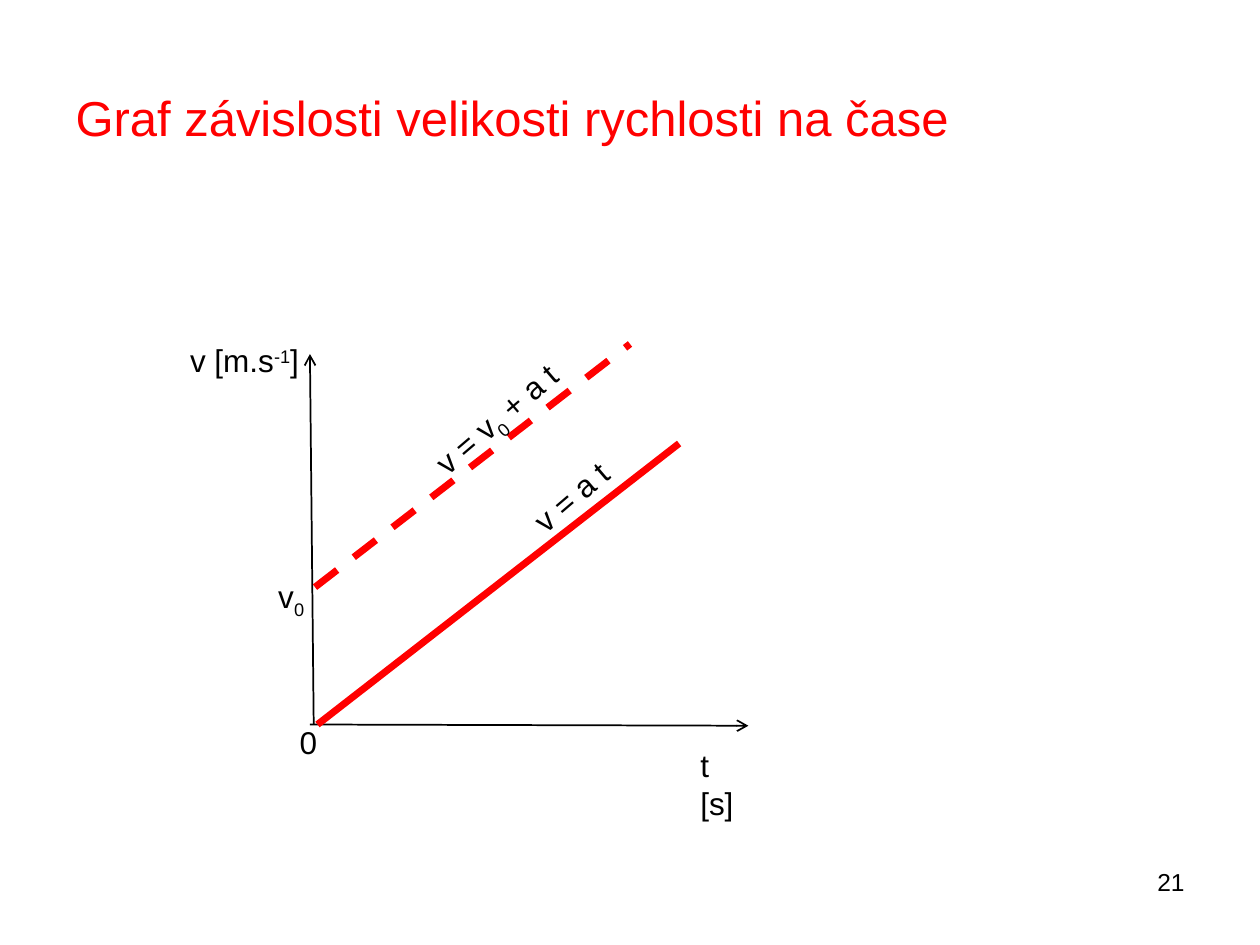
from dataclasses import dataclass
from typing import Optional

from lxml.etree import SubElement
from pptx import Presentation
from pptx.dml.color import RGBColor
from pptx.enum.dml import MSO_LINE_DASH_STYLE as Dash
from pptx.enum.shapes import MSO_CONNECTOR as Conn
from pptx.enum.text import MSO_ANCHOR as Anchor, PP_ALIGN as Align
from pptx.oxml.ns import qn
from pptx.util import Inches, Pt

COLS = 100
BLACK, RED = "000000", "FF0000"
SUPER, SUB = 30, -25


@dataclass
class Line:
    start: tuple[float, float]
    end: tuple[float, float]
    color: str
    width: float
    arrow: bool = False
    dash: Optional[Dash] = None


@dataclass
class Label:
    box: tuple[float, float, float, float]
    runs: list[tuple[str, int]]
    size: int = 18
    rotation: float = 0
    wrap: bool = True
    align: Align = Align.LEFT


AXES = [
    Line((24.6, 57.5), (59.4, 57.6), BLACK, 1, arrow=True),
    Line((24.9, 57.5), (24.6, 28.1), BLACK, 1, arrow=True),
]
GRAPHS = [
    Line((25.2, 57.5), (53.9, 35.2), RED, 4),
    Line((25, 46.6), (50, 27.3), RED, 4, dash=Dash.DASH),
]
SLOPE = 319.4
LABELS = [
    Label((71.7, 68.3, 23.3, 5.2), [("21", 0)], size=14, align=Align.RIGHT),
    Label((54.6, 58.7, 4.7, 3.1), [("t [s]", 0)]),
    Label((14.1, 26.6, 10.9, 4), [("v [m.s", 0), ("-1", SUPER), ("]", 0)], wrap=False),
    Label((22.8, 56.9, 2.6, 3.1), [("0", 0)]),
    Label((40.6, 36.7, 11.1, 4), [("v = a t", 0)], rotation=SLOPE),
    Label((32.3, 30.7, 15.3, 4), [("v = v", 0), ("0", SUB), (" + a t", 0)], rotation=SLOPE),
    Label((21.1, 45.3, 4.2, 4), [("v", 0), ("0", SUB)], wrap=False),
]

prs = Presentation()
prs.slide_width, prs.slide_height = Inches(10), Inches(7.5)
unit = prs.slide_width / COLS


def grid(*cells: float) -> list[int]:
    return [round(c * unit) for c in cells]


def rgb(value: str) -> RGBColor:
    return RGBColor.from_string(value)


def style(font, size: int, color: str) -> None:
    font.name, font.size = "Arial", Pt(size)
    font.color.rgb = rgb(color)


def draw_line(s, line: Line) -> None:
    sp = s.shapes.add_connector(Conn.STRAIGHT, *grid(*line.start, *line.end))
    sp.line.color.rgb = rgb(line.color)
    sp.line.width = Pt(line.width)
    if line.dash is not None:
        sp.line.dash_style = line.dash
    if line.arrow:
        SubElement(sp.line._get_or_add_ln(), qn("a:tailEnd"), type="arrow")
    SubElement(sp._element.spPr, qn("a:effectLst"))


def draw_label(s, label: Label) -> None:
    sp = s.shapes.add_textbox(*grid(*label.box))
    sp.rotation = label.rotation
    tf = sp.text_frame
    tf.word_wrap = label.wrap
    p = tf.paragraphs[0]
    p.alignment = label.align
    for text, baseline in label.runs:
        r = p.add_run()
        r.text = text
        style(r.font, label.size, BLACK)
        if baseline:
            r._r.get_or_add_rPr().set("baseline", str(baseline * 1000))


def draw_title(s, text: str) -> None:
    sp = s.shapes.title
    sp.left, sp.top, sp.width, sp.height = grid(5, 3, 90, 12.5)
    tf = sp.text_frame
    tf.text = text
    tf.vertical_anchor = Anchor.MIDDLE
    p = tf.paragraphs[0]
    p.alignment = Align.LEFT
    style(p.runs[0].font, 28, RED)


def main() -> None:
    s = prs.slides.add_slide(prs.slide_layouts[5])
    draw_title(s, "Graf závislosti velikosti rychlosti na čase")
    for line in AXES + GRAPHS:
        draw_line(s, line)
    for label in LABELS:
        draw_label(s, label)
    prs.save("out.pptx")


if __name__ == "__main__":
    main()
